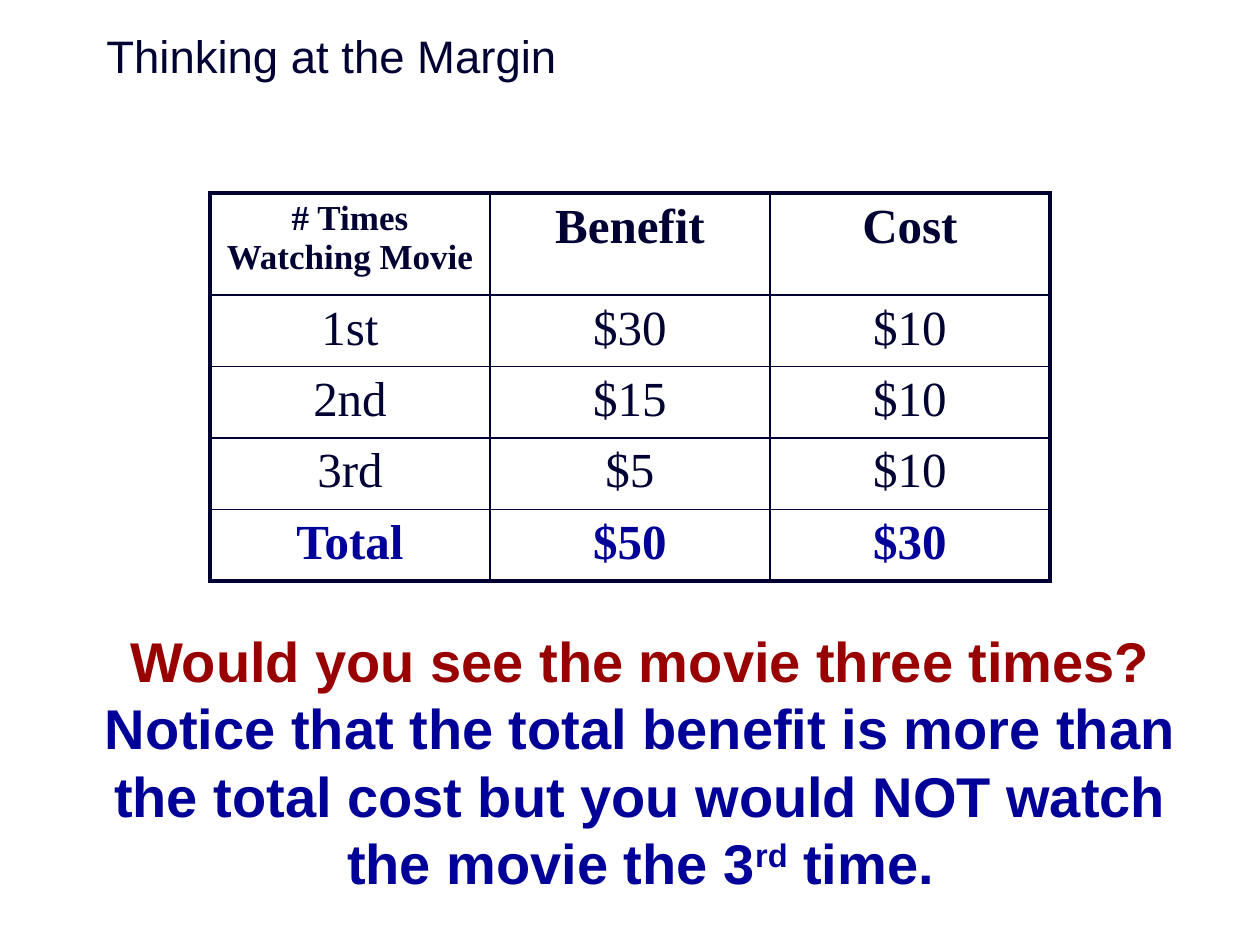
from typing import NamedTuple

from lxml.etree import SubElement
from pptx import Presentation
from pptx.dml.color import RGBColor
from pptx.enum.text import MSO_ANCHOR, PP_ALIGN
from pptx.oxml import parse_xml
from pptx.oxml.ns import nsdecls
from pptx.util import Emu, Pt

SCALE = 914400 / 126
HUES = {"ink": "000032", "blue": "000099", "red": "990000"}
SANS, SERIF = "Arial", "Times New Roman"
ROWS = [
    ["# Times Watching Movie", "Benefit", "Cost"],
    ["1st", "$30", "$10"],
    ["2nd", "$15", "$10"],
    ["3rd", "$5", "$10"],
    ["Total", "$50", "$30"],
]
COL_W, HEAD_H, ROW_H = 280, 102, 71
THIN, THICK = 1, 2.25


class Box(NamedTuple):
    left: int
    top: int
    width: int
    height: int


class Style(NamedTuple):
    face: str
    size: int
    hue: str
    bold: bool = False
    lift: int = 0


class Piece(NamedTuple):
    text: str
    style: Style


def px(count: int) -> Emu:
    return Emu(round(count * SCALE))


def add_run(para, piece: Piece) -> None:
    run = para.add_run()
    run.text = piece.text
    font, style = run.font, piece.style
    font.name, font.size, font.bold = style.face, Pt(style.size), style.bold
    font.color.rgb = RGBColor.from_string(HUES[style.hue])
    if style.lift:
        run._r.get_or_add_rPr().set("baseline", str(style.lift * 1000))


def add_text(slide, box: Box, paras: list[list[Piece]], align, anchor, pitch=None) -> None:
    frame = slide.shapes.add_textbox(*map(px, box)).text_frame
    frame.word_wrap = True
    frame.vertical_anchor = anchor
    for i, pieces in enumerate(paras):
        para = frame.add_paragraph() if i else frame.paragraphs[0]
        para.alignment = align
        if pitch:
            para.line_spacing = Pt(pitch)
        for piece in pieces:
            add_run(para, piece)


def set_edges(cell, row: int, col: int) -> None:
    """Draw thick lines on the table's outer edge and thin ones inside."""
    outer = {"L": col == 0, "R": col == len(ROWS[0]) - 1,
             "T": row == 0, "B": row == len(ROWS) - 1}
    props = cell._tc.get_or_add_tcPr()
    for i, (side, thick) in enumerate(outer.items()):
        width = Pt(THICK if thick else THIN)
        line = parse_xml(f'<a:ln{side} {nsdecls("a")} w="{width}"/>')
        fill = SubElement(line, line.tag.replace(f"ln{side}", "solidFill"))
        SubElement(fill, line.tag.replace(f"ln{side}", "srgbClr"), val=HUES["ink"])
        props.insert(i, line)


def cell_style(row: int, col: int) -> Style:
    last = row == len(ROWS) - 1
    size = 20 if row == col == 0 else 28
    return Style(SERIF, size, "blue" if last else "ink", row == 0 or last)


def add_grid(slide, left: int, top: int) -> None:
    count, cols = len(ROWS), len(ROWS[0])
    box = Box(left, top, COL_W * cols, HEAD_H + ROW_H * (count - 1))
    table = slide.shapes.add_table(count, cols, *map(px, box)).table
    table.first_row = table.horz_banding = False
    for col in table.columns:
        col.width = px(COL_W)
    for r, texts in enumerate(ROWS):
        table.rows[r].height = px(ROW_H if r else HEAD_H)
        for c, text in enumerate(texts):
            cell = table.cell(r, c)
            cell.fill.background()
            set_edges(cell, r, c)
            para = cell.text_frame.paragraphs[0]
            para.alignment = PP_ALIGN.CENTER
            add_run(para, Piece(text, cell_style(r, c)))


def main() -> None:
    deck = Presentation()
    deck.slide_width, deck.slide_height = px(1260), px(945)
    slide = deck.slides.add_slide(deck.slide_layouts[6])

    blue = Style(SANS, 32, "blue", True)
    ask = [Piece("Would you see the movie three times?", blue._replace(hue="red"))]
    note = [
        Piece("Notice that the total benefit is more than the total cost "
              "but you would NOT watch the movie the 3", blue),
        Piece("rd", blue._replace(lift=30)),
        Piece(" time.", blue),
    ]
    add_text(slide, Box(63, 620, 1155, 285), [ask, note],
             PP_ALIGN.CENTER, MSO_ANCHOR.TOP, 38.5)
    title = [Piece("Thinking at the Margin", Style(SANS, 26, "ink"))]
    add_text(slide, Box(94, -24, 1071, 158), [title], PP_ALIGN.LEFT, MSO_ANCHOR.MIDDLE)
    add_grid(slide, 210, 193)
    deck.save("out.pptx")


if __name__ == "__main__":
    main()
